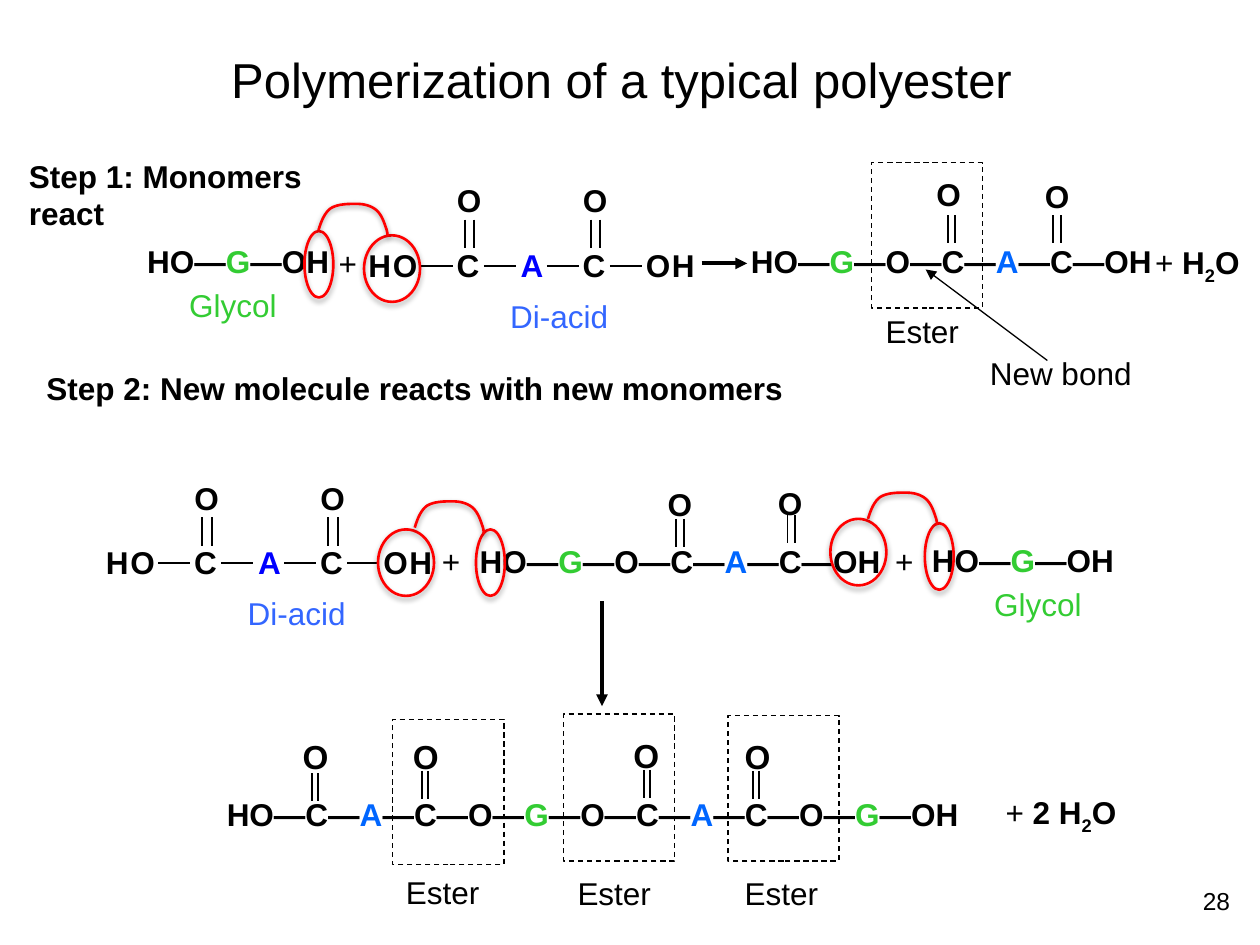
from itertools import groupby
from lxml.etree import SubElement as Sub
from pptx import Presentation
from pptx.dml.color import RGBColor
from pptx.enum.dml import MSO_LINE as Dash
from pptx.enum.shapes import MSO_CONNECTOR as Link, MSO_SHAPE as Form
from pptx.enum.text import MSO_AUTO_SIZE as Fit, PP_ALIGN as Align
from pptx.oxml.ns import qn
from pptx.util import Pt

BLACK, RED, GREEN, BLUE = "000000", "FF0000", "33CC33", "3366FF"
TINTS = {"G": GREEN, "A": "0066FF"}
BOLD = {"bold": True}
ESTER = "HO―G―O―C―A―C―OH"
ARC = [(0, 15), (1.5, 10), (3.5, 5), (7, 2.5), (11, 0), (17, 0), (21.5, 0),
       (26, 0), (30, 1), (33, 3.5), (36, 6), (37.5, 10.5), (38.5, 13.5),
       (39.5, 16), (39.5, 18.5), (39.5, 18.5)]


def ink(code):
    return RGBColor.from_string(code)


def apply(target, values):
    for name, value in values.items():
        setattr(target, name, value)


def text(shapes, spot, width, runs, size=18, inset=True, wrap=False, align=Align.LEFT):
    height = size * 1.2 + (7.2 if inset else 0)
    box = shapes.add_textbox(*map(Pt, (*spot, width, height)))
    frame = box.text_frame
    apply(frame, {"word_wrap": wrap, "auto_size": Fit.SHAPE_TO_FIT_TEXT})
    if not inset:
        sides = ("left", "top", "right", "bottom")
        apply(frame, {f"margin_{side}": 0 for side in sides})
    para = frame.paragraphs[0]
    para.alignment = align
    for words, color, style, base in runs:
        run = para.add_run()
        run.text = words
        apply(run.font, {"name": "Arial", "size": Pt(size), **style})
        run.font.color.rgb = ink(color)
        if base:
            run._r.get_or_add_rPr().set("baseline", str(base * 1000))


def label(shapes, x, y, width, words, color=BLACK, style={}, **rest):
    text(shapes, (x, y), width, [(words, color, style, 0)], **rest)


def chain(shapes, x, y, width, words):
    parts = groupby(words, lambda sign: TINTS.get(sign, BLACK))
    text(shapes, (x, y), width, [("".join(run), color, BOLD, 0) for color, run in parts])


def water(shapes, x, y, width, count):
    text(shapes, (x, y), width, [("+ ", BLACK, {}, 0), (count + "H", BLACK, BOLD, 0),
                                 ("2", BLACK, BOLD, -25), ("O", BLACK, BOLD, 0)])


def line(shapes, start, end, width=1.13, arrow=False):
    link = shapes.add_connector(Link.STRAIGHT, *map(Pt, (*start, *end)))
    link.line.width = Pt(width)
    link.line.color.rgb = ink(BLACK)
    props = link._element.spPr
    if arrow:
        Sub(props.find(qn("a:ln")), qn("a:tailEnd"), type="triangle")
    Sub(props, qn("a:effectLst"))


def double(shapes, x, y, gap=4.5, height=16):
    for left in (x, x + gap):
        line(shapes, (left, y), (left, y + height))


def atom(shapes, x, y, sign, color=BLACK, size=18):
    label(shapes, x, y, 14 if sign in "OA" else 13, sign, color, BOLD,
          size=size, inset=False)


def outline(shape, color, width):
    shape.fill.background()
    shape.line.color.rgb = ink(color)
    shape.line.width = Pt(width)
    shape.shadow.inherit = False


def frame(shapes, x, y, height=83):
    box = shapes.add_shape(Form.RECTANGLE, *map(Pt, (x, y, 63.5, height)))
    outline(box, BLACK, 0.75)
    box.line.dash_style = Dash.DASH


def mark(shape, alpha, drop):
    outline(shape, RED, 1.5)
    effects = shape._element.spPr.find(qn("a:effectLst"))
    cast = Sub(effects, qn("a:outerShdw"), blurRad=str(Pt(3.1)), dist=str(Pt(drop)),
               dir="5400000", rotWithShape="0")
    tone = Sub(cast, qn("a:srgbClr"), val=BLACK)
    Sub(tone, qn("a:alpha"), val=str(alpha * 1000))


def ring(shapes, x, y, width):
    mark(shapes.add_shape(Form.OVAL, *map(Pt, (x, y, width, 38))), 35, 1.8)


def curve(points, steps=8):
    for i in range(0, len(points) - 1, 3):
        for k in range(1, steps + 1):
            t = k / steps
            rates = ((1 - t) ** 3, 3 * t * (1 - t) ** 2, 3 * t * t * (1 - t), t ** 3)
            yield tuple(sum(r * p[axis] for r, p in zip(rates, points[i:i + 4]))
                        for axis in (0, 1))


def arc(shapes, x, y):
    spots = [(Pt(x + dx), Pt(y + dy)) for dx, dy in curve(ARC)]
    trace = shapes.build_freeform(Pt(x), Pt(y + ARC[0][1]))
    trace.add_line_segments(spots, close=False)
    mark(trace.convert_to_shape(), 38, 1.6)


def acid(shapes, x, y):
    signs = zip("HOCACOH", (0, 14, 50.5, 87, 122.5, 158.5, 173.5))
    for sign, shift in signs:
        atom(shapes, x + shift, y, sign, "0000FF" if sign == "A" else BLACK)
    for i in range(4):
        left = x + 30 + 36 * i
        line(shapes, (left, y + 11.5), (left + 18.3, y + 11.5))
    for shift in (50.5, 122.5):
        atom(shapes, x + shift, y - 37, "O")
        double(shapes, x + shift + 4.5, y - 15, 5.5, 16.5)
    label(shapes, x + 81, y + 29, 56, "Di-acid", BLUE, inset=False)


def main():
    deck = Presentation()
    apply(deck, {"slide_width": Pt(720), "slide_height": Pt(540)})
    shapes = deck.slides.add_slide(deck.slide_layouts[6]).shapes

    label(shapes, 125, 24.5, 466, "Polymerization of a typical polyester", size=28)
    label(shapes, 16.5, 89.5, 165, "Step 1: Monomers react", style=BOLD,
          inset=False, wrap=True)
    label(shapes, 19.5, 207.5, 437, "Step 2: New molecule reacts with new monomers",
          style=BOLD)

    acid(shapes, 210.5, 140.5)
    acid(shapes, 60.5, 310.5)
    for x, y, width, words in (
            (77, 134.5, 119, "HO―G―OH"),
            (422, 134.5, 246, ESTER),
            (267, 306, 246, ESTER),
            (525.5, 305.5, 119, "HO―G―OH"),
            (122.5, 451, 435, "HO―C―A―C―O―G―O―C―A―C―O―G―OH")):
        chain(shapes, x, y, width, words)
    for x, y in ((101, 160), (561, 331)):
        label(shapes, x, y, 65, "Glycol", GREEN)
    for x, y in ((186.5, 136), (245.5, 306), (504.5, 306)):
        label(shapes, x, y, 25, "+")
    water(shapes, 653, 135.5, 63.5, "")
    water(shapes, 567.5, 449.5, 78.5, "2 ")

    for x, y, left, top, size in (
            (535, 100, 541.5, 123, 18), (597, 101, 602, 123, 18),
            (381.5, 277, 386.5, 296.5, 18), (444.5, 276.5, 450, 294.5, 18),
            (173, 421, 178.5, 442, 19), (236, 421, 241, 440.5, 19),
            (362, 420, 368, 440, 19), (425.5, 420.5, 430.5, 440.5, 19)):
        atom(shapes, x, y, "O", size=size)
        double(shapes, left, top, 4.5 if size == 18 else 3.5)

    for x, y, height in ((498, 93, 83), (224.5, 411, 83),
                         (322, 408, 84), (416, 409, 83)):
        frame(shapes, x, y, height)
    for x, y in ((506, 178.5), (232, 499), (330, 499.5), (425.5, 499.5)):
        label(shapes, x, y, 42, "Ester", inset=False)
    label(shapes, 558.5, 198.5, 96, "New bond")

    for start, end, width in (((401, 150.5), (427, 150.5), 2.25),
                              ((344, 343.5), (344, 403.5), 2.25),
                              ((598.5, 206), (529, 154), 0.75)):
        line(shapes, start, end, width, arrow=True)
    for x, y, width in ((174, 132, 16.5), (208, 134.5, 32),
                        (528.5, 299, 16.5), (474.5, 296.5, 32),
                        (216, 302.5, 32), (272, 302.5, 16.5)):
        ring(shapes, x, y, width)
    for x, y in ((182, 116.5), (496, 281.5), (237, 286.5)):
        arc(shapes, x, y)
    label(shapes, 666, 502.5, 44, "28", size=14, wrap=True, align=Align.RIGHT)
    deck.save("out.pptx")


if __name__ == "__main__":
    main()
